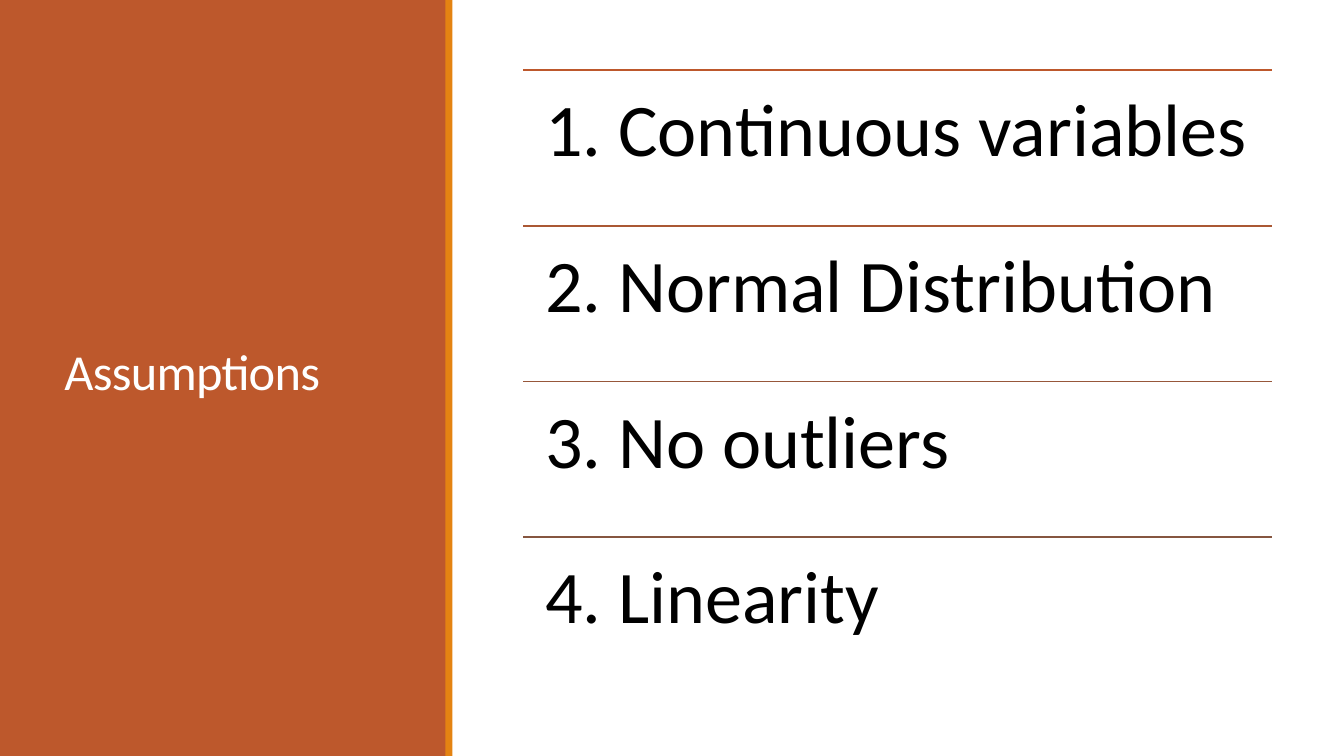
"""Build the Assumptions slide: a title sidebar beside four ruled items."""
from dataclasses import dataclass

from lxml.etree import SubElement
from pptx import Presentation
from pptx.dml.color import RGBColor
from pptx.enum.shapes import MSO_CONNECTOR, MSO_SHAPE
from pptx.enum.text import MSO_ANCHOR
from pptx.oxml.ns import qn
from pptx.util import Pt


@dataclass(frozen=True)
class Theme:
    font: str = "Calibri"
    title_size: int = 36
    item_size: int = 53
    sidebar: str = "BD582C"
    stripe: str = "E48312"
    title: str = "FFFFFF"
    item: str = "000000"
    rules: tuple = ("BD582C", "AA5834", "97573A", "865640")


def add_bar(slide, left, width, color):
    bar = slide.shapes.add_shape(MSO_SHAPE.RECTANGLE, Pt(left), Pt(0), Pt(width), Pt(540))
    bar.shadow.inherit = False
    bar.fill.solid()
    bar.fill.fore_color.rgb = RGBColor.from_string(color)
    bar.line.fill.background()


def add_text(slide, bounds, text, size, color, line_spacing):
    box = slide.shapes.add_textbox(*map(Pt, bounds))
    box.text_frame.word_wrap = True
    para = box.text_frame.paragraphs[0]
    para.line_spacing = line_spacing
    span = para.add_run()
    span.text = text
    span.font.name = theme.font
    span.font.size = Pt(size)
    span.font.color.rgb = RGBColor.from_string(color)
    return box.text_frame, span


theme = Theme()
deck = Presentation()
deck.slide_width, deck.slide_height = Pt(960), Pt(540)
page = deck.slides.add_slide(deck.slide_layouts[6])

add_bar(page, 0, 319, theme.sidebar)
add_bar(page, 318.2, 5, theme.stripe)
title_frame, title_span = add_text(
    page, (39, 41, 242.6, 454.3), "Assumptions", theme.title_size, theme.title, 0.85
)
title_frame.vertical_anchor = MSO_ANCHOR.MIDDLE
title_span.font._element.set("spc", "-50")

items = ("Continuous variables", "Normal Distribution", "No outliers", "Linearity")
list_left, list_top, list_width, row_height = 373.6, 50.2, 535, 111.2
for index, (item, rule_color) in enumerate(zip(items, theme.rules)):
    top = list_top + index * row_height
    rule = page.shapes.add_connector(
        MSO_CONNECTOR.STRAIGHT, Pt(list_left), Pt(top), Pt(list_left + list_width), Pt(top)
    )
    rule.line.width = Pt(1.25)
    rule.line.color.rgb = RGBColor.from_string(rule_color)
    SubElement(rule._element.spPr, qn("a:effectLst"))
    frame, span = add_text(
        page,
        (list_left, top, list_width, row_height),
        f"{index + 1}. {item}",
        theme.item_size,
        theme.item,
        0.9,
    )
    frame.margin_left = frame.margin_right = Pt(15.9)
    frame.margin_top = frame.margin_bottom = Pt(15.9)

deck.save("out.pptx")
